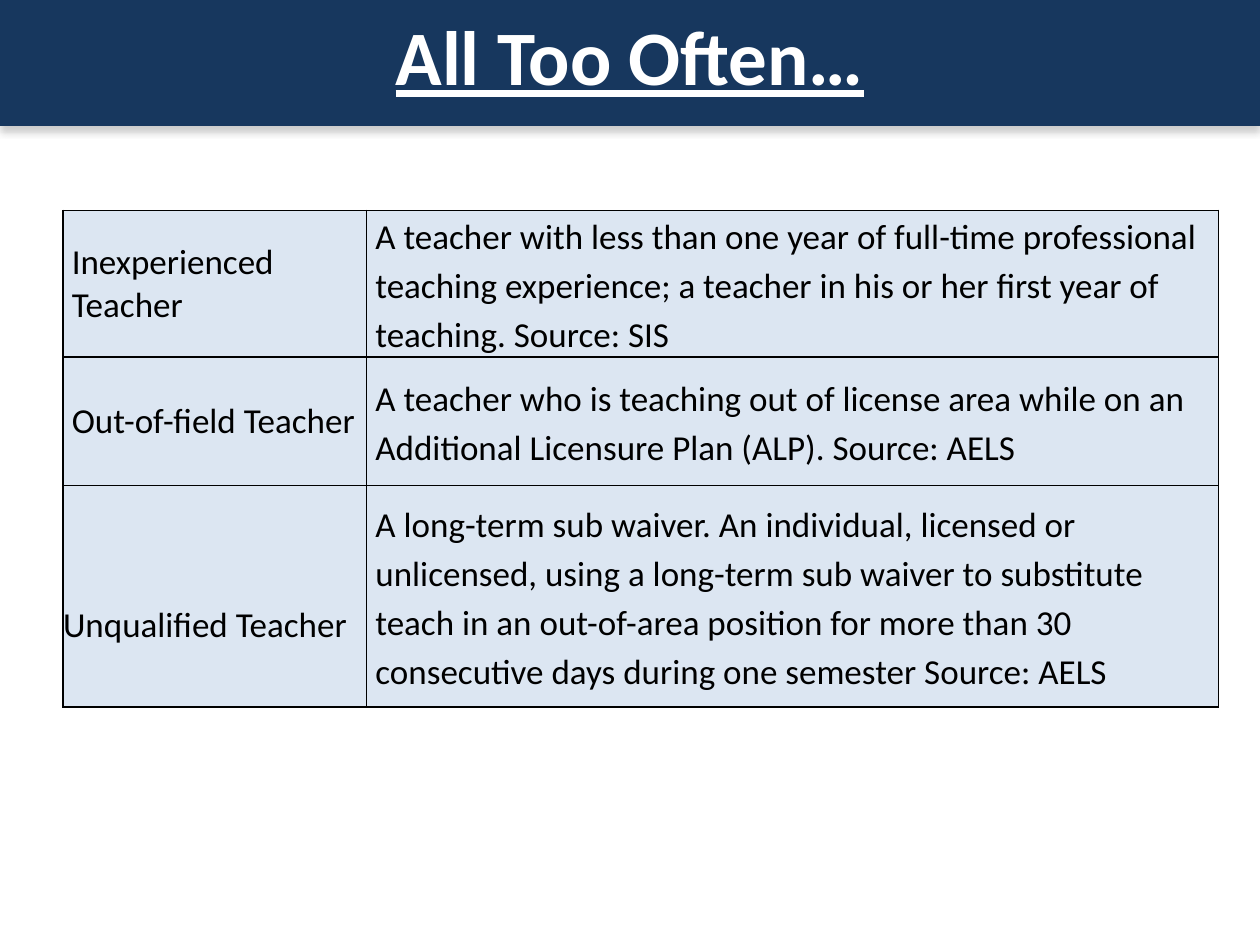
import lxml.etree
import pptx
import pptx.dml.color
import pptx.enum.shapes
import pptx.enum.text
import pptx.oxml.ns
import pptx.util

TITLE = "All Too Often…"
DEFINITIONS = [
    ("Inexperienced Teacher",
     "A teacher with less than one year of full-time professional teaching "
     "experience; a teacher in his or her first year of teaching. Source: SIS"),
    ("Out-of-field Teacher",
     "A teacher who is teaching out of license area while on an Additional "
     "Licensure Plan (ALP). Source: AELS"),
    ("Unqualified Teacher",
     "A long-term sub waiver. An individual, licensed or unlicensed, using a "
     "long-term sub waiver to substitute teach in an out-of-area position for "
     "more than 30 consecutive days during one semester Source: AELS"),
]
COLUMN_WIDTHS = [2.41, 6.76]
ROW_HEIGHTS = [1.02, 1.02, 1.76]
TABLE_LEFT, TABLE_TOP = 0.5, 1.67
CELL_INDENT = 0.07
LAST_TERM_DROP = 0.47
NAVY, PALE_BLUE, BLACK, WHITE, GRAY = "17375E", "DCE6F2", "000000", "FFFFFF", "808080"

Inches, Pt = pptx.util.Inches, pptx.util.Pt
MIDDLE = pptx.enum.text.MSO_ANCHOR.MIDDLE


def paint(fill, color):
    fill.solid()
    fill.fore_color.rgb = pptx.dml.color.RGBColor.from_string(color)


def add_xml(parent, tag, **attributes):
    return lxml.etree.SubElement(parent, pptx.oxml.ns.qn(tag), attributes)


def style_text(paragraph, size, color, bold=False, underline=False):
    for run in paragraph.runs:
        font = run.font
        font.name, font.size = "Calibri", Pt(size)
        font.bold, font.underline = bold, underline
        paint(font.fill, color)


def add_shadow(shape):
    shape.shadow.inherit = False
    effects = shape._element.spPr.find(pptx.oxml.ns.qn("a:effectLst"))
    shadow = add_xml(effects, "a:outerShdw", blurRad=str(Pt(4)), dist=str(Pt(3)),
                     dir=str(90 * 60000), rotWithShape="0")
    color = add_xml(shadow, "a:srgbClr", val=GRAY)
    add_xml(color, "a:alpha", val="40000")


def add_borders(cell):
    properties = cell._tc.get_or_add_tcPr()
    for side in ("a:lnL", "a:lnR", "a:lnT", "a:lnB"):
        line = add_xml(properties, side, w=str(Pt(1)))
        add_xml(add_xml(line, "a:solidFill"), "a:srgbClr", val=BLACK)


def fill_cell(cell, text, indent=CELL_INDENT, drop=0, line_spacing=None):
    """Write one table cell; drop pushes its text below the middle."""
    cell.text_frame.text = text
    cell.vertical_anchor = MIDDLE
    cell.margin_left, cell.margin_top = Inches(indent), Inches(drop)
    cell.margin_right = cell.margin_bottom = 0
    paragraph = cell.text_frame.paragraphs[0]
    paragraph.line_spacing = line_spacing
    style_text(paragraph, 20, BLACK)
    add_borders(cell)
    paint(cell.fill, PALE_BLUE)


def main():
    deck = pptx.Presentation()
    deck.slide_width, deck.slide_height = Inches(10), Inches(7.5)
    slide = deck.slides.add_slide(deck.slide_layouts[6])

    banner = slide.shapes.add_shape(pptx.enum.shapes.MSO_SHAPE.RECTANGLE,
                                    0, 0, deck.slide_width, Inches(1))
    paint(banner.fill, NAVY)
    banner.line.fill.background()
    add_shadow(banner)

    table = slide.shapes.add_table(
        len(ROW_HEIGHTS), len(COLUMN_WIDTHS), Inches(TABLE_LEFT), Inches(TABLE_TOP),
        Inches(sum(COLUMN_WIDTHS)), Inches(sum(ROW_HEIGHTS))).table
    table.first_row = table.horz_banding = False
    for column, width in zip(table.columns, COLUMN_WIDTHS):
        column.width = Inches(width)
    for row, height, (term, meaning) in zip(table.rows, ROW_HEIGHTS, DEFINITIONS):
        row.height = Inches(height)
        term_cell, meaning_cell = row.cells
        if term == DEFINITIONS[-1][0]:
            fill_cell(term_cell, term, indent=0, drop=LAST_TERM_DROP)
        else:
            fill_cell(term_cell, term)
        fill_cell(meaning_cell, meaning, line_spacing=1.14)

    title = slide.shapes.add_textbox(Inches(0.5), 0, Inches(9), Inches(0.87)).text_frame
    title.word_wrap = True
    title.vertical_anchor = MIDDLE
    title.text = TITLE
    title.paragraphs[0].alignment = pptx.enum.text.PP_ALIGN.CENTER
    style_text(title.paragraphs[0], 44, WHITE, bold=True, underline=True)

    deck.save("out.pptx")


if __name__ == "__main__":
    main()
